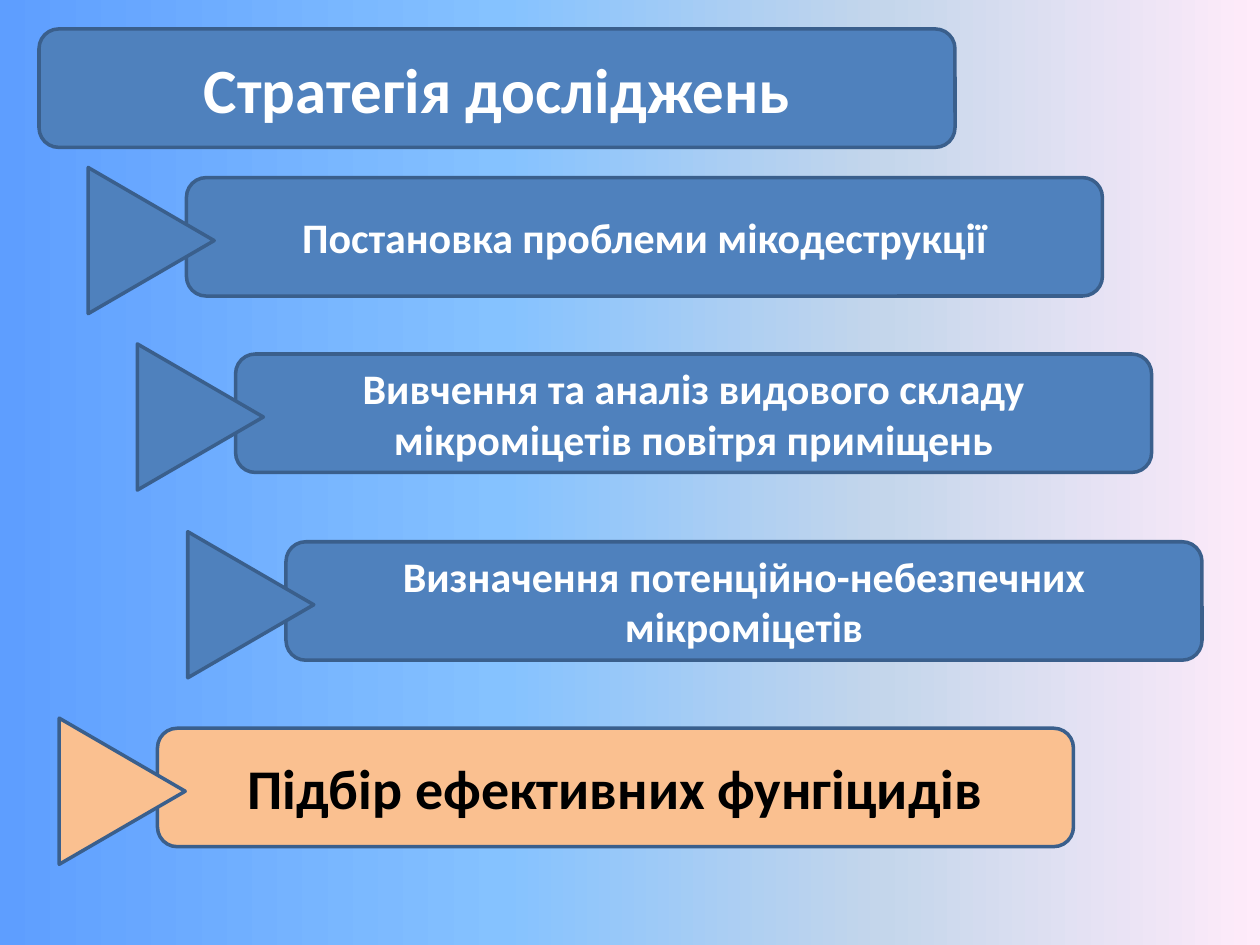
import copy

import pptx
import pptx.dml.color
import pptx.enum.shapes
import pptx.enum.text
import pptx.oxml.ns
import pptx.util

Inches = pptx.util.Inches
SHAPES = pptx.enum.shapes.MSO_SHAPE


def color(value):
    return pptx.dml.color.RGBColor.from_string(value)


def write(box, text, *, font, size, ink, bold=True):
    frame = box.text_frame
    frame.word_wrap = True
    frame.vertical_anchor = pptx.enum.text.MSO_ANCHOR.MIDDLE
    para = frame.paragraphs[0]
    para.alignment = pptx.enum.text.PP_ALIGN.CENTER
    span = para.add_run()
    span.text = text
    span.font.name = font
    span.font.size = pptx.util.Pt(size)
    span.font.bold = bold
    span.font.color.rgb = color(ink)


class Painter:
    font = "Calibri"
    blue = "4F81BD"
    peach = "FAC090"
    outline = "3A5F8C"
    bar_width, bar_height = 7.27, 0.94
    arrow_width, arrow_height = 1.16, 1
    arrow_shift = 0.86

    def __init__(self, page):
        self.page = page

    def background(self, stops):
        fill = self.page.background.fill
        fill.gradient()
        fill.gradient_angle = 0
        stop_list = self.page.element.find(".//" + pptx.oxml.ns.qn("a:gsLst"))
        while len(stop_list) < len(stops):
            stop_list.append(copy.deepcopy(stop_list[0]))
        for stop, (position, value) in zip(fill.gradient_stops, stops):
            stop.position = position
            stop.color.rgb = color(value)

    def shape(self, kind, left, top, width, height, fill):
        shape = self.page.shapes.add_shape(
            kind, Inches(left), Inches(top), Inches(width), Inches(height))
        shape.shadow.inherit = False
        shape.fill.solid()
        shape.fill.fore_color.rgb = color(fill)
        shape.line.color.rgb = color(self.outline)
        shape.line.width = pptx.util.Pt(2)
        return shape

    def bar(self, left, top, text, size, fill=blue, ink="FFFFFF"):
        box = self.shape(SHAPES.ROUNDED_RECTANGLE, left, top,
                         self.bar_width, self.bar_height, fill)
        write(box, text, font=self.font, size=size, ink=ink)

    def arrow(self, left, top, fill=blue):
        arrow = self.shape(SHAPES.ISOSCELES_TRIANGLE, left, top,
                           self.arrow_width, self.arrow_height, fill)
        arrow.rotation = 90

    def step(self, left, top, text, size=24, fill=blue, ink="FFFFFF"):
        self.bar(left, top, text, size, fill, ink)
        self.arrow(left - self.arrow_shift, top, fill)


def main():
    deck = pptx.Presentation()
    deck.slide_width = Inches(10)
    deck.slide_height = Inches(7.5)
    painter = Painter(deck.slides.add_slide(deck.slide_layouts[6]))
    painter.background([(0, "5E9EFF"), (0.4, "85C2FF"),
                        (0.7, "C4D6EB"), (1, "FFEBFA")])
    painter.bar(0.31, 0.23, "Стратегія досліджень", 36)
    painter.step(1.48, 1.41, "Постановка проблеми мікодеструкції")
    painter.step(1.87, 2.81, "Вивчення та аналіз видового складу "
                             "мікроміцетів повітря приміщень")
    painter.step(2.27, 4.3, "Визначення потенційно-небезпечних мікроміцетів")
    painter.step(1.25, 5.78, "Підбір ефективних фунгіцидів",
                 size=32, fill=Painter.peach, ink="000000")
    deck.save("out.pptx")


if __name__ == "__main__":
    main()
